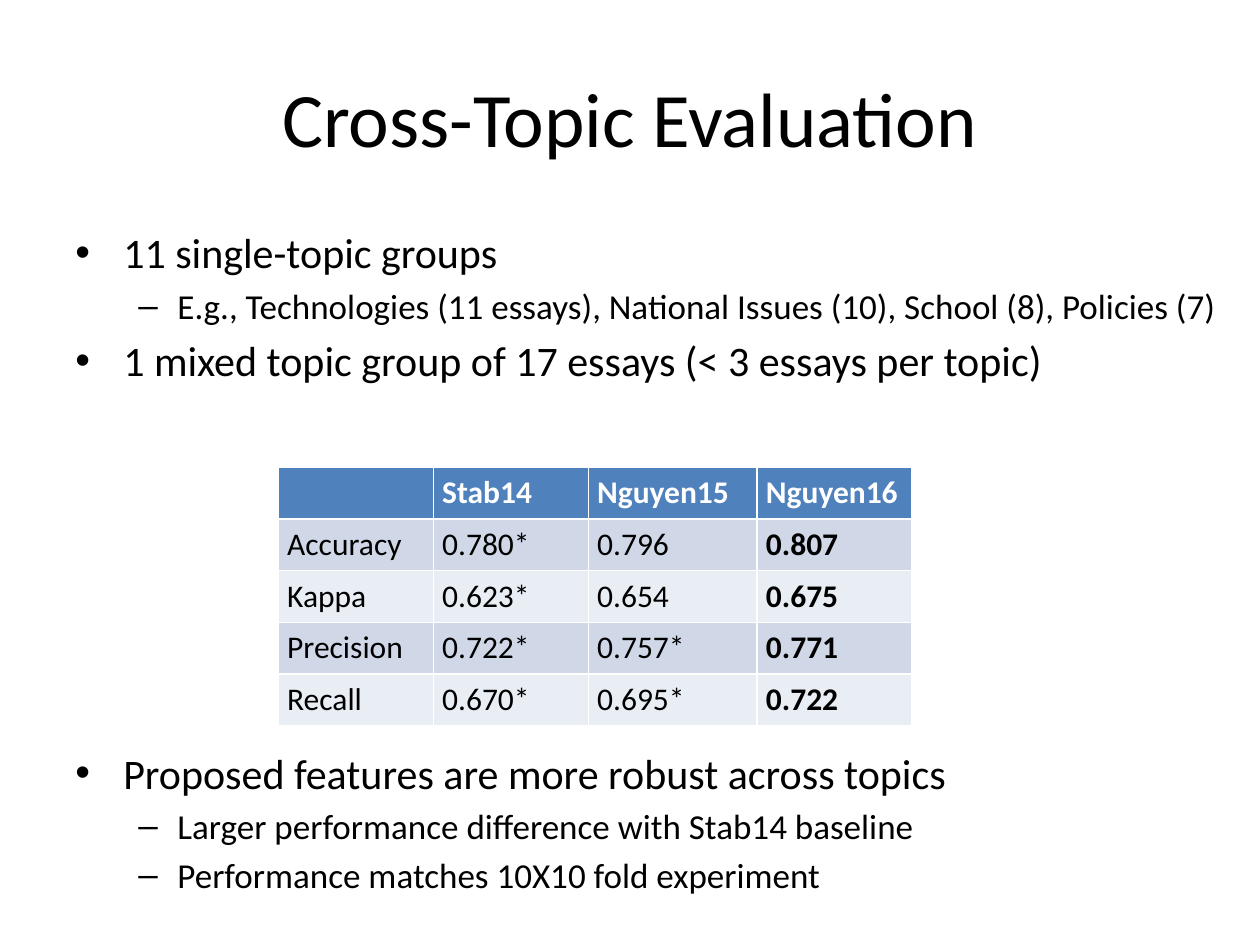
from lxml.etree import SubElement
from pptx import Presentation
from pptx.dml.color import RGBColor
from pptx.enum.text import MSO_ANCHOR, PP_ALIGN
from pptx.oxml.ns import qn
from pptx.util import Inches, Pt

FONT = "Calibri"
BLACK, WHITE, BLUE = "000000", "FFFFFF", "4F81BD"
BANDS = ["D0D8E8", "E9EDF4"]

TITLE = "Cross-Topic Evaluation"
TABLE_GAP = 207
LEVELS = [
    {"size": 24, "bullet": "•", "margin": 0.38, "indent": -0.38, "before": 4.8},
    {"size": 20, "bullet": "–", "margin": 0.81, "indent": -0.31, "before": 4},
]
POINTS = [
    (0, "11 single-topic groups", None),
    (1, "E.g., Technologies (11 essays), National Issues (10), School (8), Policies (7)", None),
    (0, "1 mixed topic group of 17 essays (< 3 essays per topic)", None),
    (0, "Proposed features are more robust across topics", TABLE_GAP),
    (1, "Larger performance difference with Stab14 baseline", None),
    (1, "Performance matches 10X10 fold experiment", None),
]
SCORES = [
    ["", "Stab14", "Nguyen15", "Nguyen16"],
    ["Accuracy", "0.780*", "0.796", "0.807"],
    ["Kappa", "0.623*", "0.654", "0.675"],
    ["Precision", "0.722*", "0.757*", "0.771"],
    ["Recall", "0.670*", "0.695*", "0.722"],
]
COLUMN_WIDTHS = [1.23, 1.23, 1.34, 1.23]
ROW_HEIGHT = 0.41


def color(value):
    return RGBColor.from_string(value)


def set_font(para, size, ink=BLACK, bold=False):
    para.font.name = FONT
    para.font.size = Pt(size)
    para.font.bold = bold
    para.font.color.rgb = color(ink)


def add_box(page, left, top, width, height):
    box = page.shapes.add_textbox(Inches(left), Inches(top), Inches(width), Inches(height))
    box.text_frame.word_wrap = True
    return box.text_frame


def add_title(page):
    frame = add_box(page, 0.5, 0.3, 9, 1.25)
    frame.vertical_anchor = MSO_ANCHOR.MIDDLE
    para = frame.paragraphs[0]
    para.text = TITLE
    para.alignment = PP_ALIGN.CENTER
    set_font(para, 44)


def add_bullet(para, style):
    properties = para._p.get_or_add_pPr()
    properties.set("marL", str(Inches(style["margin"])))
    properties.set("indent", str(Inches(style["indent"])))
    SubElement(properties, qn("a:buFont")).set("typeface", "Arial")
    SubElement(properties, qn("a:buChar")).set("char", style["bullet"])


def add_points(page):
    frame = add_box(page, 0.5, 1.75, 9.28, 5.75)
    for index, (level, text, gap) in enumerate(POINTS):
        para = frame.add_paragraph() if index else frame.paragraphs[0]
        style = LEVELS[level]
        para.text = text
        para.level = level
        para.space_before = Pt(gap or style["before"])
        add_bullet(para, style)
        set_font(para, style["size"])


def add_scores(page):
    rows, columns = len(SCORES), len(COLUMN_WIDTHS)
    table = page.shapes.add_table(
        rows, columns, Inches(2.21), Inches(3.71),
        Inches(sum(COLUMN_WIDTHS)), Inches(rows * ROW_HEIGHT),
    ).table
    for column, width in zip(table.columns, COLUMN_WIDTHS):
        column.width = Inches(width)
    for r, values in enumerate(SCORES):
        table.rows[r].height = Inches(ROW_HEIGHT)
        header = r == 0
        for c, value in enumerate(values):
            cell = table.cell(r, c)
            cell.fill.solid()
            cell.fill.fore_color.rgb = color(BLUE if header else BANDS[(r - 1) % 2])
            cell.margin_left = cell.margin_right = Inches(0.07)
            cell.margin_top = cell.margin_bottom = Inches(0.05)
            para = cell.text_frame.paragraphs[0]
            para.text = value
            set_font(para, 18, WHITE if header else BLACK, header or c == columns - 1)


def main():
    deck = Presentation()
    deck.slide_width, deck.slide_height = Inches(10), Inches(7.5)
    page = deck.slides.add_slide(deck.slide_layouts[6])
    add_title(page)
    add_points(page)
    add_scores(page)
    deck.save("out.pptx")


if __name__ == "__main__":
    main()
